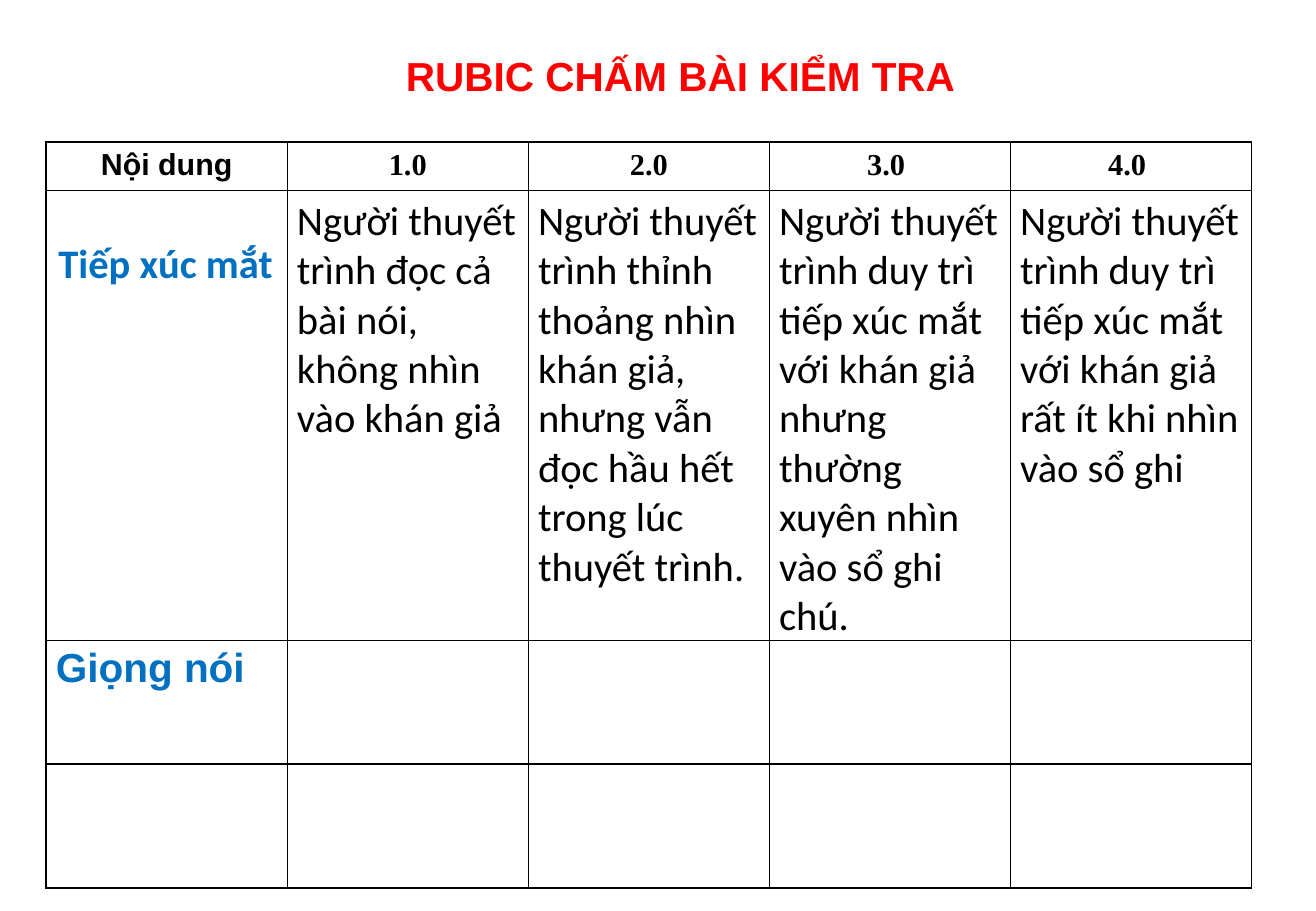
"""Build a one-slide rubric for marking a spoken test."""
import pptx
import pptx.dml.color
import pptx.enum.text
import pptx.oxml
import pptx.oxml.ns
import pptx.util

INCH = pptx.util.Inches
ALIGN = pptx.enum.text.PP_ALIGN
INK = {"title": "FF0000", "topic": "0070C0", "text": "000000"}
COLS = 5
WIDTH = 9.92
ROWS = (0.4, 3.7, 1.02, 1.02)
HEADS = ("1.0", "2.0", "3.0 ", "4.0 ")
LEVELS = (
    "Người thuyết trình đọc cả bài nói, không nhìn vào khán giả",
    "Người thuyết trình thỉnh thoảng nhìn khán giả, nhưng vẫn đọc hầu hết trong lúc thuyết trình.",
    "Người thuyết trình duy trì tiếp xúc mắt với khán giả nhưng thường xuyên nhìn vào sổ ghi chú.",
    "Người thuyết trình duy trì tiếp xúc mắt với khán giả rất ít khi nhìn vào sổ ghi",
)


def write(frame, text, size, face, ink="text", bold=True, align=ALIGN.LEFT):
    para = frame.paragraphs[0]
    para.text = text
    para.alignment = align
    font = para.font
    font.size = pptx.util.Pt(size)
    font.name = face
    font.bold = bold
    font.color.rgb = pptx.dml.color.RGBColor.from_string(INK[ink])


def border(cell):
    props = cell._tc.get_or_add_tcPr()
    space = pptx.oxml.ns.nsdecls("a")
    for place, side in enumerate("LRTB"):
        line = pptx.oxml.parse_xml(
            f'<a:ln{side} {space} w="12700"><a:solidFill>'
            f'<a:srgbClr val="{INK["text"]}"/></a:solidFill></a:ln{side}>')
        props.insert(place, line)


def add_title(slide):
    box = slide.shapes.add_textbox(INCH(2.86), INCH(0.37), INCH(5.48), INCH(0.5))
    frame = box.text_frame
    frame.word_wrap = True
    frame.auto_size = pptx.enum.text.MSO_AUTO_SIZE.SHAPE_TO_FIT_TEXT
    write(frame, "RUBIC CHẤM BÀI KIỂM TRA", 24, "Arial", "title", align=ALIGN.CENTER)


def add_grid(slide):
    shape = slide.shapes.add_table(len(ROWS), COLS, INCH(0.38), INCH(1.17),
                                   INCH(WIDTH), INCH(sum(ROWS)))
    table = shape.table
    table.first_row = table.horz_banding = False
    for col in table.columns:
        col.width = INCH(WIDTH / COLS)
    for row, height in zip(table.rows, ROWS):
        row.height = INCH(height)
    for cell in table.iter_cells():
        cell.margin_left = cell.margin_right = INCH(0.08)
        cell.margin_top = cell.margin_bottom = INCH(0.05)
        cell.fill.background()
        border(cell)
    return table


def fill_grid(table):
    write(table.cell(0, 0).text_frame, "Nội dung", 18, "Arial", align=ALIGN.CENTER)
    for col, (head, level) in enumerate(zip(HEADS, LEVELS), 1):
        write(table.cell(0, col).text_frame, head, 18, "Times New Roman", align=ALIGN.CENTER)
        write(table.cell(1, col).text_frame, level, 24, "Calibri", bold=False)
    eye = table.cell(1, 0)
    eye.margin_left = eye.margin_right = INCH(0.1)
    eye.margin_top = INCH(0.41)
    write(eye.text_frame, "Tiếp xúc mắt", 24, "Calibri", "topic")
    write(table.cell(2, 0).text_frame, "Giọng nói", 24, "Arial", "topic")


def main():
    deck = pptx.Presentation()
    deck.slide_width = INCH(10.83)
    deck.slide_height = INCH(7.5)
    slide = deck.slides.add_slide(deck.slide_layouts[6])
    add_title(slide)
    fill_grid(add_grid(slide))
    deck.save("out.pptx")


if __name__ == "__main__":
    main()
